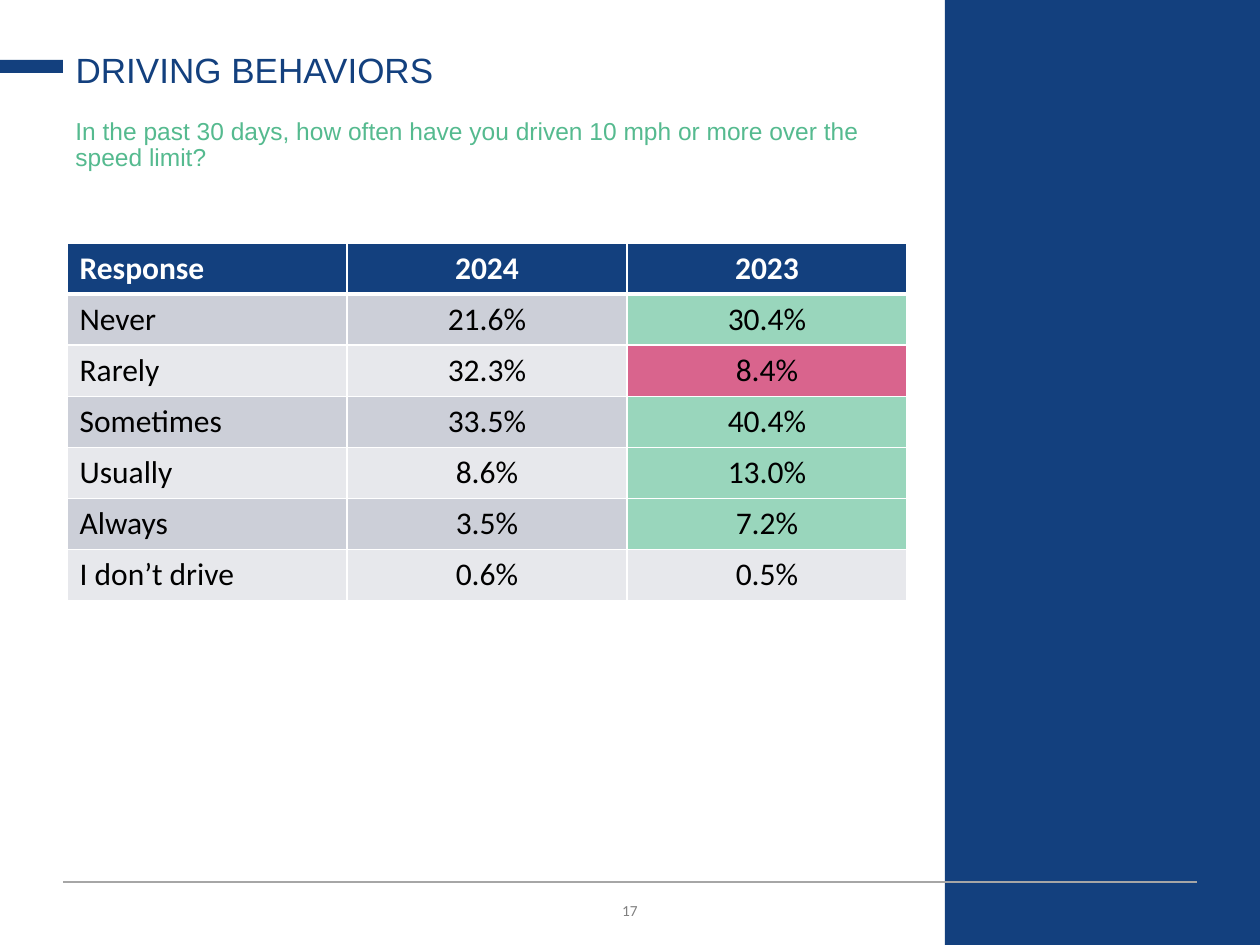
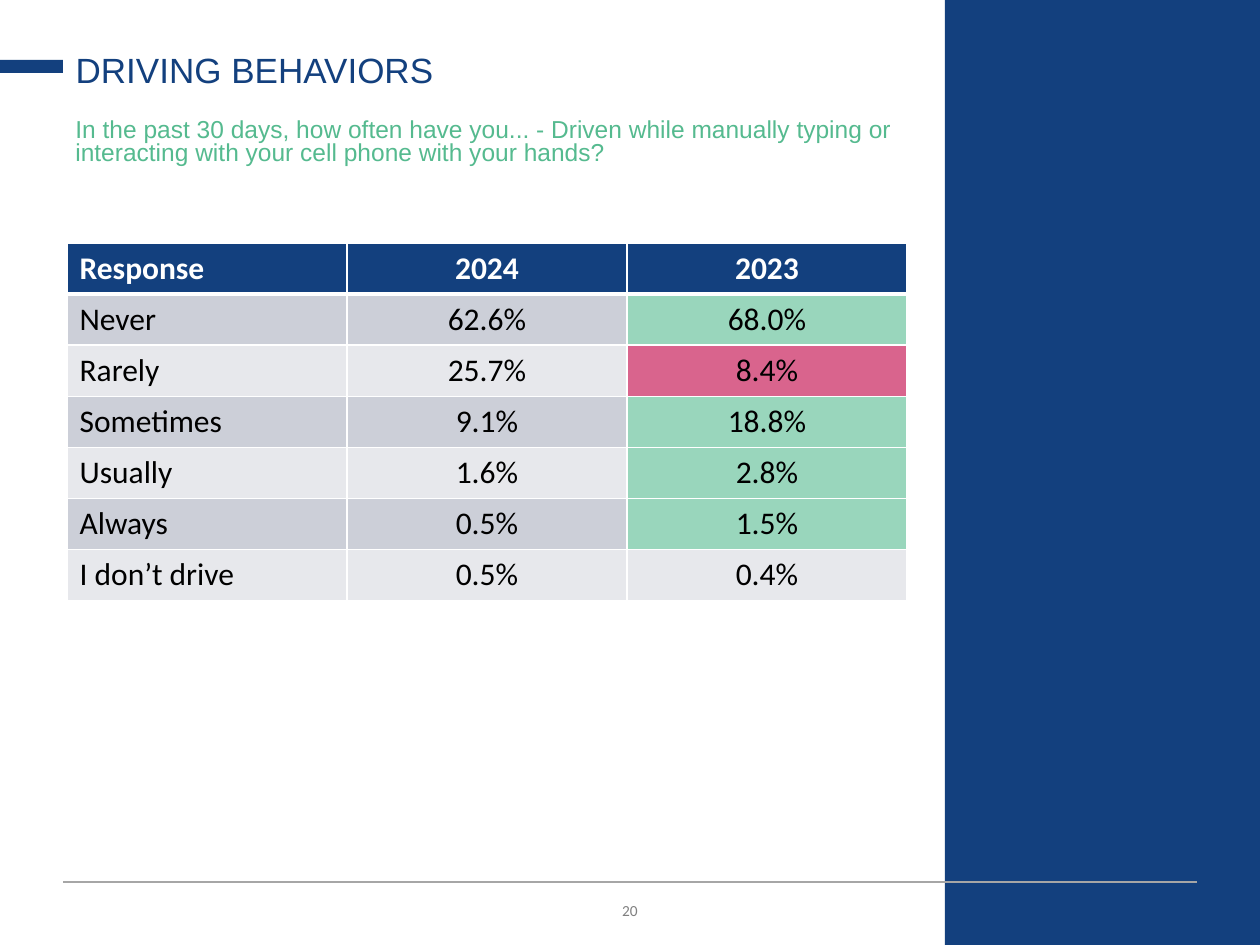
"""Build two survey slides comparing driving behaviors in 2024 and 2023."""
from lxml import etree
from pptx import Presentation
from pptx import util as u
from pptx.dml import color
from pptx.enum import shapes, text
from pptx.oxml import ns

EMU_PER_PX = 914400 / 126
NAVY, GREEN, GRAY, RULE_GRAY = "13407E", "55BA8F", "808080", "A6A6A6"
WHITE, BLACK = "FFFFFF", "000000"
BANDS = ["CCCFD8", "E7E8EC"]
HIGHER, LOWER = "99D6BC", "D9648D"
SHIFT_FILLS = {"Never": HIGHER, "Rarely": LOWER, "Sometimes": HIGHER,
               "Usually": HIGHER, "Always": HIGHER}
ANSWERS = ["Never", "Rarely", "Sometimes", "Usually", "Always", "I don’t drive"]
LEFT, CENTER = text.PP_ALIGN.LEFT, text.PP_ALIGN.CENTER
TOP, MIDDLE, BOTTOM = (text.MSO_ANCHOR.TOP, text.MSO_ANCHOR.MIDDLE,
                       text.MSO_ANCHOR.BOTTOM)

QUESTIONS = [
    {"page": "17", "spacing": 0.9,
     "question": "In the past 30 days, how often have you driven 10 mph or more "
                 "over the speed limit?",
     "2024": ["21.6%", "32.3%", "33.5%", "8.6%", "3.5%", "0.6%"],
     "2023": ["30.4%", "8.4%", "40.4%", "13.0%", "7.2%", "0.5%"]},
    {"page": "20", "spacing": 0.8,
     "question": "In the past 30 days, how often have you... - Driven while manually "
                 "typing or interacting with your cell phone with your hands?",
     "2024": ["62.6%", "25.7%", "9.1%", "1.6%", "0.5%", "0.5%"],
     "2023": ["68.0%", "8.4%", "18.8%", "2.8%", "1.5%", "0.4%"]},
]


def px(*lengths):
    return [u.Emu(round(length * EMU_PER_PX)) for length in lengths]


def rgb(code):
    return color.RGBColor.from_string(code)


deck = Presentation()
deck.slide_width, deck.slide_height = px(1260, 945)

for survey in QUESTIONS:
    slide = deck.slides.add_slide(deck.slide_layouts[5])

    for box in [(945, 0, 315, 945), (0, 60, 63, 13)]:
        band = slide.shapes.add_shape(shapes.MSO_SHAPE.RECTANGLE, *px(*box))
        band.shadow.inherit = False
        band.fill.solid()
        band.fill.fore_color.rgb = rgb(NAVY)
        band.line.fill.background()

    footer_rule = slide.shapes.add_connector(
        shapes.MSO_CONNECTOR.STRAIGHT, *px(63, 882, 1197, 882))
    footer_rule.line.color.rgb = rgb(RULE_GRAY)
    footer_rule.line.width = u.Pt(0.75)
    etree.SubElement(footer_rule._element.spPr, ns.qn("a:effectLst"))

    heading = slide.shapes.title
    heading.left, heading.top, heading.width, heading.height = px(63, 37, 844, 60)
    question = slide.shapes.add_textbox(*px(63, 113, 844, 84))
    page_number = slide.shapes.add_textbox(*px(63, 890, 1134, 38))

    for part, words, anchor, align, spacing, look in [
        (heading, "DRIVING BEHAVIORS", BOTTOM, LEFT, 0.9,
         {"name": "Arial", "size": u.Pt(20), "tint": NAVY}),
        (question, survey["question"], TOP, LEFT, survey["spacing"],
         {"name": "Arial", "size": u.Pt(14), "tint": GREEN}),
        (page_number, survey["page"], MIDDLE, CENTER, 1.0,
         {"name": "Calibri", "size": u.Pt(11), "tint": GRAY}),
    ]:
        frame = part.text_frame
        frame.text = words
        for key, value in {"word_wrap": True, "vertical_anchor": anchor,
                           "auto_size": text.MSO_AUTO_SIZE.NONE}.items():
            setattr(frame, key, value)
        line = frame.paragraphs[0]
        line.alignment, line.line_spacing = align, spacing
        font = line.runs[0].font
        font.color.rgb = rgb(look.pop("tint"))
        for key, value in look.items():
            setattr(font, key, value)
    page_number.text_frame.paragraphs[0].runs[0]._r.get_or_add_rPr().set("cap", "small")

    rows = [("Response", "2024", "2023"),
            *zip(ANSWERS, survey["2024"], survey["2023"])]
    responses = slide.shapes.add_table(
        len(rows), 3, *px(67, 243, 840, 51 * len(rows))).table
    for column in responses.columns:
        column.width, = px(280)

    for r, row in enumerate(rows):
        responses.rows[r].height, = px(51)
        for c, words in enumerate(row):
            cell = responses.cell(r, c)
            edges = {"lnL": 1, "lnR": 1, "lnT": 3 if r == 1 else 1,
                     "lnB": 3 if r == 0 else 1}
            for edge, points in edges.items():
                border = etree.SubElement(cell._tc.get_or_add_tcPr(),
                                          ns.qn("a:" + edge), w=str(u.Pt(points)))
                paint = etree.SubElement(border, ns.qn("a:solidFill"))
                etree.SubElement(paint, ns.qn("a:srgbClr"), val=WHITE)

            fill = NAVY if r == 0 else BANDS[(r - 1) % 2]
            if c == 2:
                fill = SHIFT_FILLS.get(row[0], fill)
            cell.fill.solid()
            cell.fill.fore_color.rgb = rgb(fill)

            cell.text = words
            line = cell.text_frame.paragraphs[0]
            line.alignment = CENTER if c else LEFT
            font = line.runs[0].font
            font.color.rgb = rgb(BLACK if r else WHITE)
            for key, value in {"name": "Calibri", "size": u.Pt(18),
                               "bold": r == 0}.items():
                setattr(font, key, value)

deck.save("out.pptx")
